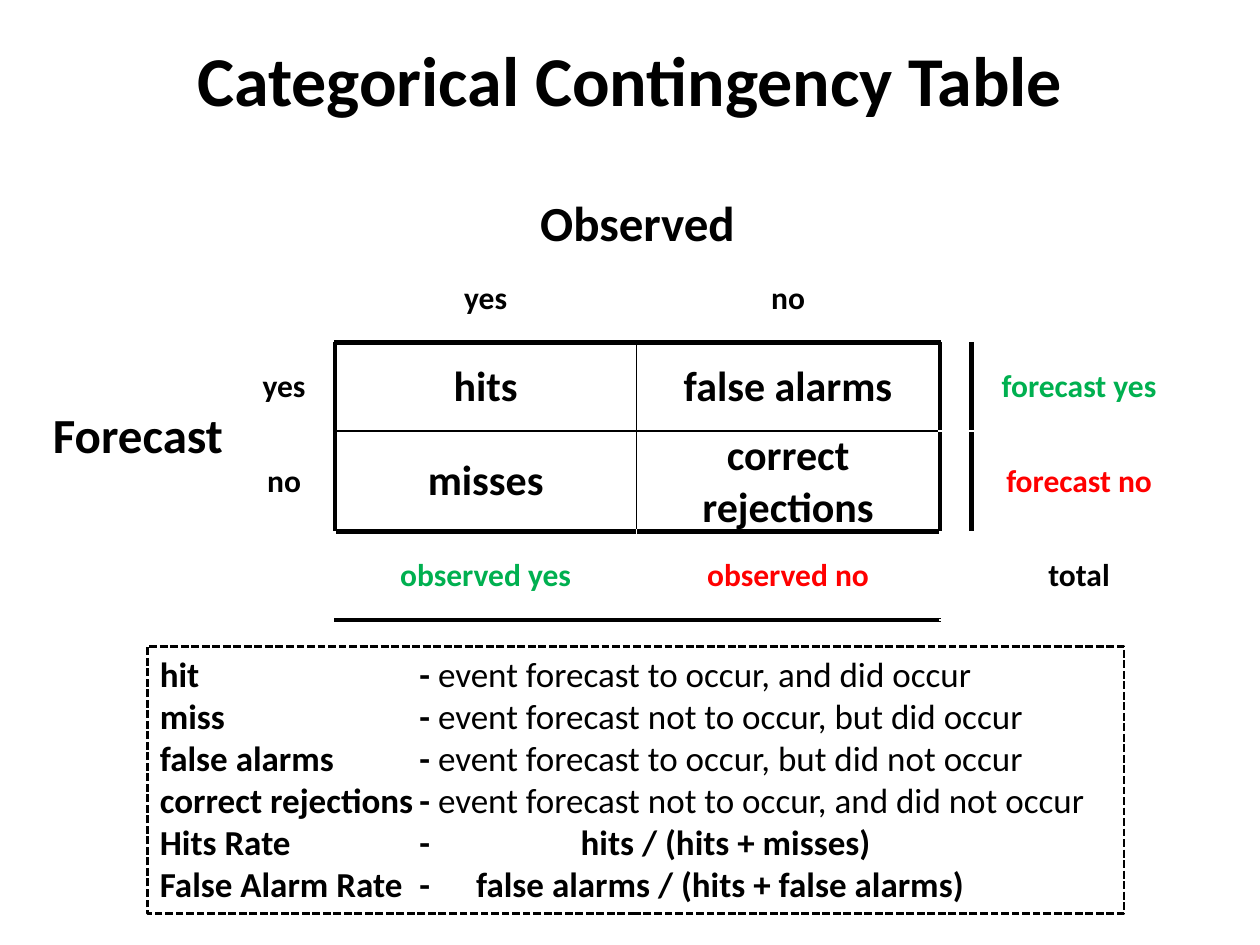
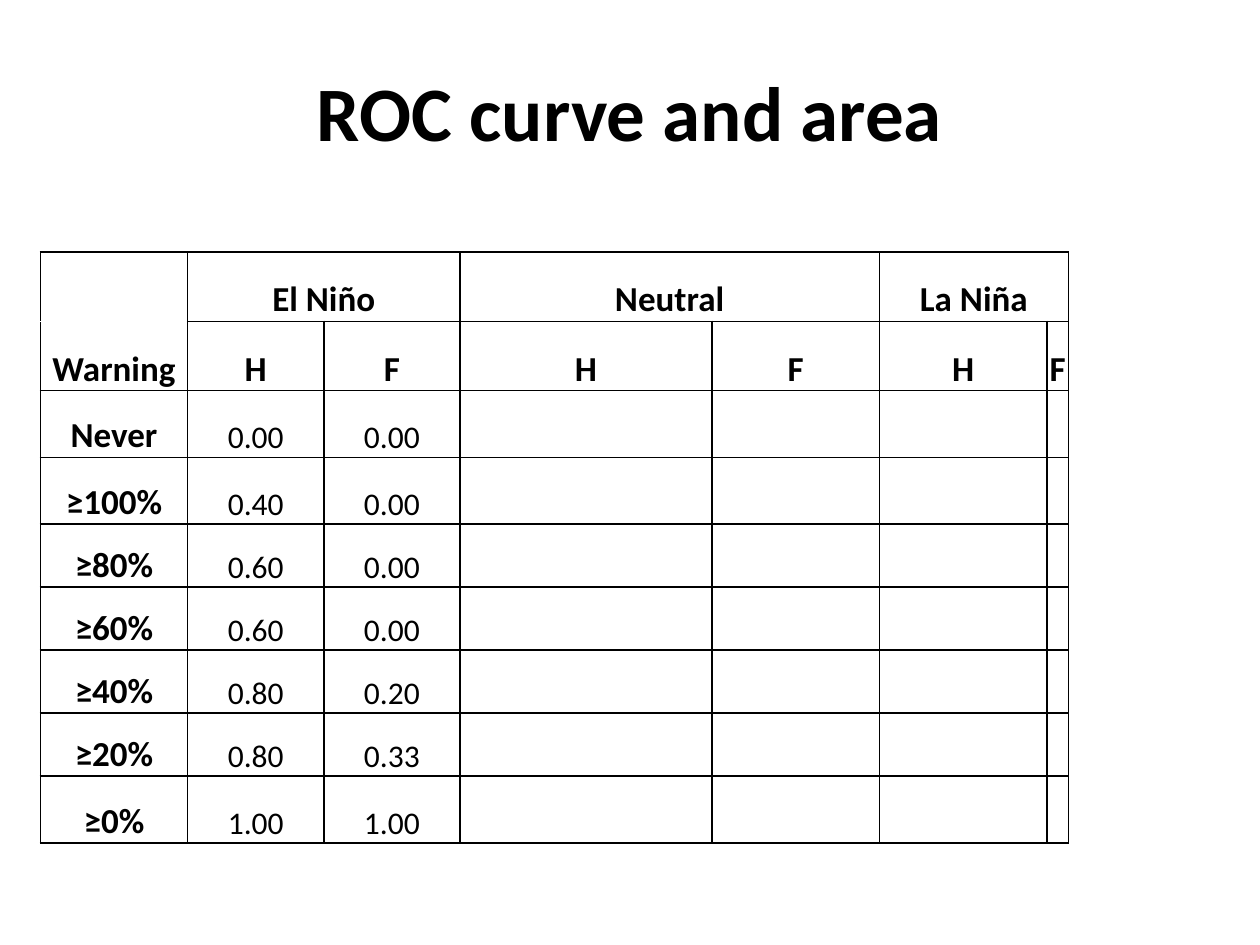
from dataclasses import dataclass
from itertools import product

from lxml import etree
from pptx import Presentation
from pptx import util as u
from pptx.dml.color import RGBColor
from pptx.enum import dml, shapes, text
from pptx.oxml import ns

COLORS = {"ink": "000000", "paper": "FFFFFF", "correct": "00B050", "wrong": "FF0000"}
FONT = "Calibri"
ALIGN, ANCHOR = text.PP_ALIGN, text.MSO_ANCHOR
# Each side with the step to the neighbouring cell and that cell's touching side
SIDES = {"L": (0, -1, "R"), "R": (0, 1, "L"), "T": (-1, 0, "B"), "B": (1, 0, "T")}


@dataclass
class Label:
    row: int
    col: int
    words: str
    size: float = 18
    bold: bool = True
    color: str = "ink"
    rows: int = 1
    cols: int = 1
    align: ALIGN = ALIGN.CENTER
    anchor: ANCHOR = ANCHOR.MIDDLE
    side_inset: float | None = None


@dataclass
class Edge:
    side: str
    rows: tuple
    cols: tuple
    width: float = 1
    color: str = "ink"


@dataclass
class Grid:
    left: float
    top: float
    widths: list
    heights: list
    labels: list
    edges: list
    base_color: str
    fill: str | None = None
    inset: float = 0
    bottom_inset: float = 0


@dataclass
class Definition:
    term: str
    meaning: str
    is_formula: bool = False
    formula_stop: float = 0


def rgb(name: str) -> RGBColor:
    return RGBColor.from_string(COLORS[name])


def apply(target, values: dict) -> None:
    for key, value in values.items():
        setattr(target, key, value)


def add_run(paragraph, words: str, size: float, bold: bool = True, color: str = "ink") -> None:
    run = paragraph.add_run()
    run.text = words
    apply(run.font, {"name": FONT, "size": u.Pt(size), "bold": bold})
    run.font.color.rgb = rgb(color)


def add_title(slide, words: str, top: float, size: float) -> None:
    frame = slide.shapes.add_textbox(
        u.Inches(0.5), u.Inches(top), u.Inches(9), u.Inches(1.25)).text_frame
    apply(frame, {"word_wrap": True, "vertical_anchor": ANCHOR.MIDDLE})
    frame.paragraphs[0].alignment = ALIGN.CENTER
    add_run(frame.paragraphs[0], words, size)


def add_child(parent, tag: str, **attributes):
    return etree.SubElement(parent, ns.qn(tag), attributes)


def edge_map(grid: Grid) -> dict:
    """Give each side of each cell its (colour, width); touching sides agree."""
    cells = product(range(len(grid.heights)), range(len(grid.widths)))
    borders = {(r, c, side): (grid.base_color, 1) for r, c in cells for side in SIDES}
    for edge in grid.edges:
        down, right, opposite = SIDES[edge.side]
        for r, c in product(edge.rows, edge.cols):
            borders[r, c, edge.side] = (edge.color, edge.width)
            borders[r + down, c + right, opposite] = (edge.color, edge.width)
    return borders


def add_grid(slide, grid: Grid) -> None:
    table = slide.shapes.add_table(
        len(grid.heights), len(grid.widths), u.Inches(grid.left), u.Inches(grid.top),
        u.Inches(sum(grid.widths)), u.Inches(sum(grid.heights))).table
    apply(table, {"first_row": False, "horz_banding": False})
    for column, width in zip(table.columns, grid.widths):
        column.width = u.Inches(width)
    for row, height in zip(table.rows, grid.heights):
        row.height = u.Inches(height)

    # Borders, fill and insets
    borders = edge_map(grid)
    inset = u.Inches(grid.inset)
    margins = {"margin_left": inset, "margin_right": inset, "margin_top": inset,
               "margin_bottom": u.Inches(grid.bottom_inset)}
    for r, c in product(range(len(grid.heights)), range(len(grid.widths))):
        cell = table.cell(r, c)
        properties = cell._tc.get_or_add_tcPr()
        for side in SIDES:
            color, width = borders[r, c, side]
            line = add_child(properties, f"a:ln{side}", w=str(u.Pt(width)))
            add_child(add_child(line, "a:solidFill"), "a:srgbClr", val=COLORS[color])
        if grid.fill:
            cell.fill.solid()
            cell.fill.fore_color.rgb = rgb(grid.fill)
        else:
            cell.fill.background()
        apply(cell, margins)

    # Wording
    for label in grid.labels:
        cell = table.cell(label.row, label.col)
        if label.rows * label.cols > 1:
            cell.merge(table.cell(label.row + label.rows - 1, label.col + label.cols - 1))
        cell.vertical_anchor = label.anchor
        if label.side_inset is not None:
            side_inset = u.Inches(label.side_inset)
            apply(cell, {"margin_left": side_inset, "margin_right": side_inset})
        paragraph = cell.text_frame.paragraphs[0]
        paragraph.alignment = label.align
        add_run(paragraph, label.words, label.size, label.bold, label.color)


def add_definitions(slide, definitions: list) -> None:
    box = slide.shapes.add_shape(shapes.MSO_SHAPE.RECTANGLE, u.Inches(1.17),
                                 u.Inches(5.13), u.Inches(7.75), u.Inches(2.12))
    box.shadow.inherit = False
    box.fill.background()
    box.line.color.rgb = rgb("ink")
    apply(box.line, {"width": u.Pt(1.5), "dash_style": dml.MSO_LINE.SQUARE_DOT})
    frame = box.text_frame
    apply(frame, {"word_wrap": True, "vertical_anchor": ANCHOR.TOP})
    for i, item in enumerate(definitions):
        paragraph = frame.add_paragraph() if i else frame.paragraphs[0]
        paragraph.alignment = ALIGN.LEFT
        stops = [2.06] + ([item.formula_stop] if item.is_formula else [])
        tabs = add_child(paragraph._p.get_or_add_pPr(), "a:tabLst")
        for stop in stops:
            add_child(tabs, "a:tab", pos=str(u.Inches(stop)), algn="l")
        add_run(paragraph, f"{item.term}\t-" + ("\t" if item.is_formula else " "), 20)
        add_run(paragraph, item.meaning, 20, bold=item.is_formula)


# Contingency table: forecasts in rows, observations in columns
CONTINGENCY = Grid(
    0.42, 1.25, [1.43, 0.81, 2.39, 2.41, 0.25, 1.71], [0.77, 0.7, 0.7, 0.7, 0.7, 0.6],
    [
        Label(0, 2, "Observed", 28, cols=2, anchor=ANCHOR.BOTTOM),
        Label(1, 2, "yes"),
        Label(1, 3, "no"),
        Label(2, 0, "Forecast", 28, rows=2, align=ALIGN.LEFT),
        Label(2, 1, "yes"),
        Label(2, 2, "hits", 24),
        Label(2, 3, "false alarms", 24),
        Label(2, 5, "forecast yes", color="correct"),
        Label(3, 1, "no"),
        Label(3, 2, "misses", 24),
        Label(3, 3, "correct rejections", 24, side_inset=0.1),
        Label(3, 5, "forecast no", color="wrong"),
        Label(4, 2, "observed yes", color="correct"),
        Label(4, 3, "observed no", color="wrong"),
        Label(4, 5, "total"),
    ],
    [
        Edge("T", (2, 4), (2, 3), 3),
        Edge("B", (4,), (2, 3), 3),
        Edge("L", (2, 3), (2,), 3),
        Edge("R", (2, 3), (3, 4), 3),
        Edge("R", (2, 3), (2,)),
        Edge("B", (2,), (2, 3)),
    ],
    base_color="paper",
)

DEFINITIONS = [
    Definition("hit", "event forecast to occur, and did occur"),
    Definition("miss", "event forecast not to occur, but did occur"),
    Definition("false alarms", "event forecast to occur, but did not occur"),
    Definition("correct rejections", "event forecast not to occur, and did not occur"),
    Definition("Hits Rate", "hits / (hits + misses)", True, 3.34),
    Definition("False Alarm Rate", "false alarms / (hits + false alarms)", True, 2.51),
]

# Hit and false alarm rates by warning threshold
PHASES = ["El Niño", "Neutral", "La Niña"]
RATES = [
    ("Never", "0.00", "0.00"),
    ("≥100%", "0.40", "0.00"),
    ("≥80%", "0.60", "0.00"),
    ("≥60%", "0.60", "0.00"),
    ("≥40%", "0.80", "0.20"),
    ("≥20%", "0.80", "0.33"),
    ("≥0%", "1.00", "1.00"),
]


def roc_labels() -> list:
    low = {"anchor": ANCHOR.BOTTOM}
    labels = [Label(1, 0, "Warning", 20, **low)]
    for i, phase in enumerate(PHASES):
        col = 1 + 2 * i
        labels += [Label(0, col, phase, 20, cols=2, **low),
                   Label(1, col, "H", 20, **low), Label(1, col + 1, "F", 20, **low)]
    for row, (warning, *rates) in enumerate(RATES, start=2):
        labels.append(Label(row, 0, warning, 20, **low))
        labels += [Label(row, col, rate, bold=False, **low)
                   for col, rate in enumerate(rates, start=1)]
    return labels


def main() -> None:
    deck = Presentation()
    apply(deck, {"slide_width": u.Inches(10), "slide_height": u.Inches(7.5)})
    blank = deck.slide_layouts[6]

    contingency = deck.slides.add_slide(blank)
    add_title(contingency, "Categorical Contingency Table", 0, 40)
    add_grid(contingency, CONTINGENCY)
    add_definitions(contingency, DEFINITIONS)

    roc = deck.slides.add_slide(blank)
    add_grid(roc, Grid(
        0.32, 2, [1.17, 1.08, 1.08, 2, 1.33, 1.33, 0.17],
        [0.55] * 2 + [0.53] * 2 + [0.5] * 4 + [0.53],
        roc_labels(), [Edge("B", (0,), (0,), color="paper")],
        base_color="ink", fill="paper", inset=0.01))
    add_title(roc, "ROC curve and area", 0.25, 44)

    deck.save("out.pptx")


if __name__ == "__main__":
    main()
